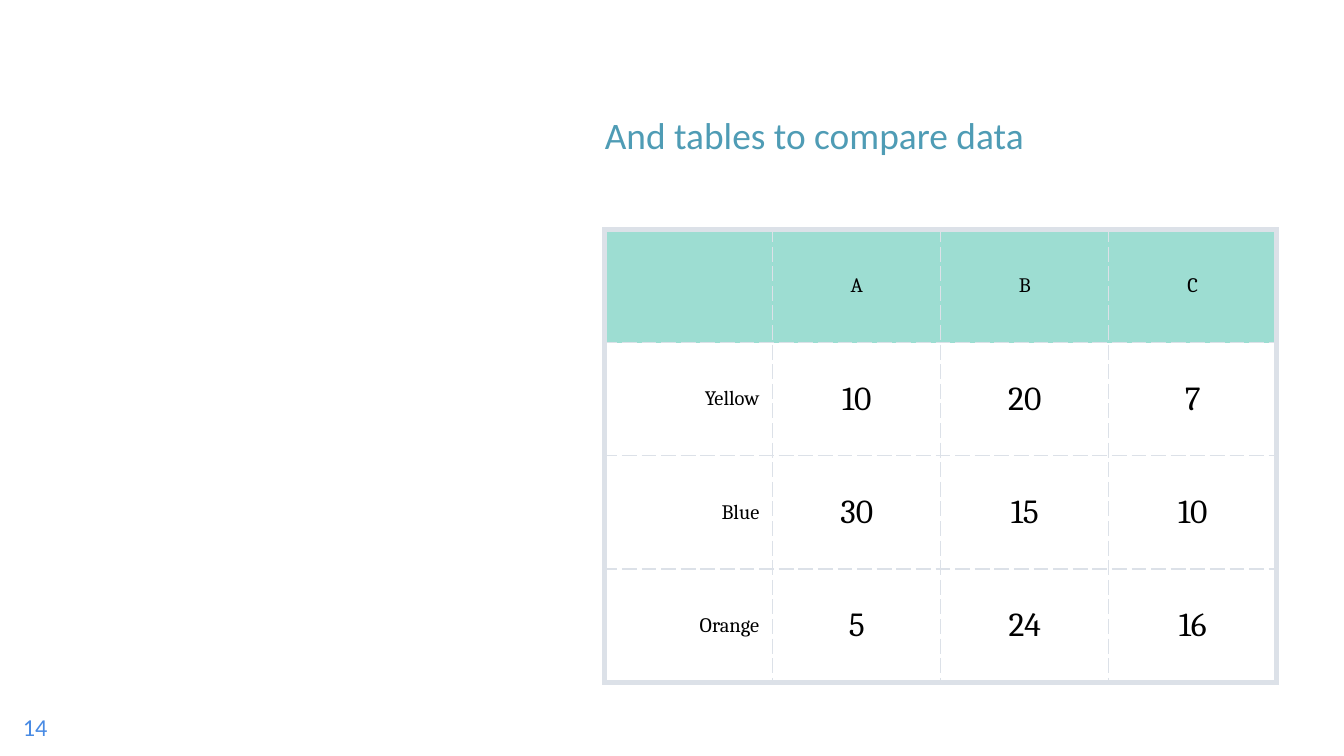
from lxml import etree
from pptx import Presentation
from pptx.dml.color import RGBColor
from pptx.enum.text import MSO_ANCHOR, MSO_AUTO_SIZE, PP_ALIGN
from pptx.oxml.ns import qn
from pptx.util import Pt

LEFT, CENTER, RIGHT = PP_ALIGN.LEFT, PP_ALIGN.CENTER, PP_ALIGN.RIGHT
MIDDLE, BOTTOM = MSO_ANCHOR.MIDDLE, MSO_ANCHOR.BOTTOM
NO_FIT = MSO_AUTO_SIZE.NONE

BLACK = RGBColor(0x00, 0x00, 0x00)
TEAL = RGBColor(0x4F, 0x9C, 0xB5)
MINT = RGBColor(0x9D, 0xDD, 0xD2)
GRAY = RGBColor(0xDC, 0xE1, 0xE8)
BLUE = RGBColor(0x49, 0x8B, 0xE4)

ROWS = [
    ["", "A", "B", "C"],
    ["Yellow", "10", "20", "7"],
    ["Blue", "30", "15", "10"],
    ["Orange", "5", "24", "16"],
]


class SlideBuilder:
    heading_font = "Calibri"
    body_font = "Cambria"
    outer_width = Pt(3)
    inner_width = Pt(0.75)

    def __init__(self, page):
        self.page = page

    def add_span(self, para, text, font, size, color, align):
        para.alignment = align
        span = para.add_run()
        span.text = text
        span.font.name = font
        span.font.size = Pt(size)
        span.font.color.rgb = color
        span.font.bold = False

    def fill_frame(self, frame, text, size, color, anchor):
        frame.word_wrap = True
        frame.auto_size = NO_FIT
        frame.vertical_anchor = anchor
        frame.margin_left = frame.margin_right = 0
        frame.margin_top = frame.margin_bottom = 0
        self.add_span(frame.paragraphs[0], text, self.heading_font, size, color, LEFT)

    def title(self, text, left, top, width, height):
        box = self.page.shapes.title
        box.left, box.top = Pt(left), Pt(top)
        box.width, box.height = Pt(width), Pt(height)
        self.fill_frame(box.text_frame, text, 20, TEAL, BOTTOM)

    def page_number(self, text, left, top, width, height):
        box = self.page.shapes.add_textbox(Pt(left), Pt(top), Pt(width), Pt(height))
        self.fill_frame(box.text_frame, text, 13, BLUE, MIDDLE)

    def border(self, cell, side, outer):
        width = self.outer_width if outer else self.inner_width
        properties = cell._tc.get_or_add_tcPr()
        line = etree.SubElement(properties, qn(f"a:ln{side}"), w=str(width))
        fill = etree.SubElement(line, qn("a:solidFill"))
        etree.SubElement(fill, qn("a:srgbClr"), val=str(GRAY))
        etree.SubElement(line, qn("a:prstDash"), val="solid" if outer else "dash")

    def table(self, rows, left, top, width, height):
        last_row, last_column = len(rows) - 1, len(rows[0]) - 1
        frame = self.page.shapes.add_table(
            len(rows), len(rows[0]), Pt(left), Pt(top), Pt(width), Pt(height)
        )
        table = frame.table
        table.first_row = table.horz_banding = False
        for r, row in enumerate(rows):
            for c, text in enumerate(row):
                cell = table.cell(r, c)
                cell.vertical_anchor = MIDDLE
                cell.margin_left = cell.margin_right = Pt(7.2)
                cell.margin_top = cell.margin_bottom = Pt(5)
                self.border(cell, "L", c == 0)
                self.border(cell, "R", c == last_column)
                self.border(cell, "T", r == 0)
                self.border(cell, "B", r == last_row)
                if r == 0:
                    cell.fill.solid()
                    cell.fill.fore_color.rgb = MINT
                else:
                    cell.fill.background()
                if text:
                    size = 11 if r == 0 or c == 0 else 18
                    align = RIGHT if c == 0 else CENTER
                    para = cell.text_frame.paragraphs[0]
                    self.add_span(para, text, self.body_font, size, BLACK, align)


def main():
    deck = Presentation()
    deck.slide_width, deck.slide_height = Pt(720), Pt(405)
    builder = SlideBuilder(deck.slides.add_slide(deck.slide_layouts[5]))
    builder.title("And tables to compare data", 324, 16.5, 360, 67.5)
    builder.table(ROWS, 324, 123, 360, 242.5)
    builder.page_number("14", 12.25, 373.75, 43.2, 31)
    deck.save("out.pptx")


if __name__ == "__main__":
    main()
